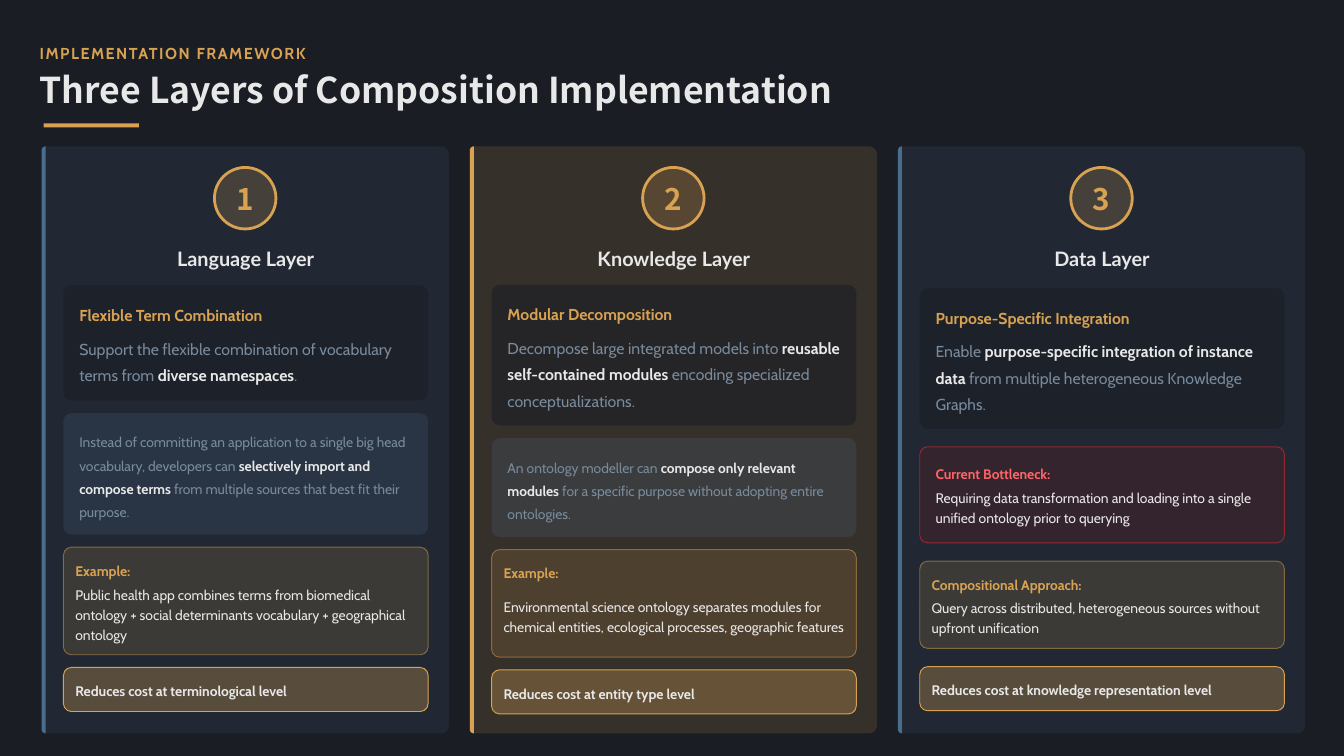
import math
from collections import namedtuple
from dataclasses import dataclass

from lxml import etree
from pptx import Presentation, util as u
from pptx.dml import color
from pptx.enum import shapes, text as t
from pptx.oxml import ns

Box = namedtuple("Box", "left top width height")
Panel = namedtuple("Panel", "style height heading body")
Layer = namedtuple("Layer", "name accent stack_top gap panels")


@dataclass(frozen=True)
class Theme:
    """Colours, fonts and type sizes of the deck."""
    night: str = "1A1D24"
    gold: str = "D8A252"
    steel: str = "4A6D8C"
    slate: str = "788A9C"
    light: str = "E8E8E8"
    wine: str = "82181A"
    red: str = "FB2C36"
    coral: str = "FF6467"
    body: str = "Cabin"
    label: str = "Lato"
    display: str = "Noto Sans CJK SC"
    title: float = 25.4
    number: float = 21.2
    name: float = 14.2
    large: float = 11.3
    small: float = 9.9


@dataclass(frozen=True)
class PanelStyle:
    """Look of one kind of panel; lengths in centimetres."""
    fill: str
    alpha: int
    line: str = None
    line_alpha: int = 50
    pad: float = 0.3
    head_height: float = 0.5
    head_gap: float = 0.1
    head_color: str = Theme.gold
    size: float = Theme.small
    color: str = Theme.light
    bold: bool = False
    spacing: float = 1.2


STYLES = {
    "claim": PanelStyle(Theme.night, 60, pad=0.4, head_height=0.6, head_gap=0.19,
                        size=Theme.large, color=Theme.slate, spacing=1.4),
    "detail": PanelStyle(Theme.steel, 20, pad=0.4, color=Theme.slate, spacing=1.4),
    "example": PanelStyle(Theme.gold, 15, Theme.gold),
    "bottleneck": PanelStyle(Theme.wine, 20, Theme.red, pad=0.4, head_color=Theme.coral),
    "verdict": PanelStyle(Theme.gold, 30, Theme.gold, line_alpha=100, bold=True),
}

LAYERS = [
    Layer("Language Layer", Theme.steel, 3.5, 0.32, [
        Panel("claim", 2.9, "Flexible Term Combination",
              "Support the flexible combination of vocabulary terms from **diverse namespaces**."),
        Panel("detail", 3.06, "",
              "Instead of committing an application to a single big head vocabulary, developers can "
              "**selectively import and compose terms** from multiple sources that best fit their purpose."),
        Panel("example", 2.71, "Example:",
              "Public health app combines terms from biomedical ontology + social determinants "
              "vocabulary + geographical ontology"),
        Panel("verdict", 1.11, "", "Reduces cost at terminological level"),
    ]),
    Layer("Knowledge Layer", Theme.gold, 3.49, 0.32, [
        Panel("claim", 3.54, "Modular Decomposition",
              "Decompose large integrated models into **reusable self-contained modules** "
              "encoding specialized conceptualizations."),
        Panel("detail", 2.49, "",
              "An ontology modeller can **compose only relevant modules** for a specific purpose "
              "without adopting entire ontologies."),
        Panel("example", 2.71, "Example:",
              "Environmental science ontology separates modules for chemical entities, "
              "ecological processes, geographic features"),
        Panel("verdict", 1.11, "", "Reduces cost at entity type level"),
    ]),
    Layer("Data Layer", Theme.steel, 3.57, 0.46, [
        Panel("claim", 3.54, "Purpose-Specific Integration",
              "Enable **purpose-specific integration of instance data** from multiple "
              "heterogeneous Knowledge Graphs."),
        Panel("bottleneck", 2.42, "Current Bottleneck:",
              "Requiring data transformation and loading into a single unified ontology prior to querying"),
        Panel("example", 2.2, "Compositional Approach:",
              "Query across distributed, heterogeneous sources without upfront unification"),
        Panel("verdict", 1.11, "", "Reduces cost at knowledge representation level"),
    ]),
]


def lengths(box):
    """Turn a box in centimetres into slide lengths."""
    return [u.Cm(value) for value in box]


def write(shape, text, size, tint, font=Theme.body, bold=False, spacing=1.2,
          align=t.PP_ALIGN.LEFT, tracking=0):
    """Put one formatted paragraph in a shape; ** marks emphasis."""
    frame = shape.text_frame
    frame.word_wrap = True
    frame.auto_size = t.MSO_AUTO_SIZE.NONE
    frame.vertical_anchor = t.MSO_ANCHOR.MIDDLE
    frame.margin_left = frame.margin_top = frame.margin_right = frame.margin_bottom = 0
    para = frame.paragraphs[0]
    para.alignment = align
    para.line_spacing = spacing
    for index, part in enumerate(text.split("**")):
        strong = index % 2 == 1
        span = para.add_run()
        span.text = part
        span.font.name = font
        span.font.size = u.Pt(size)
        span.font.bold = bold or strong
        span.font.color.rgb = color.RGBColor.from_string(Theme.light if strong else tint)
        if tracking:
            span.font._element.set("spc", str(tracking))


def add_text(page, box, text, **style):
    """Add a text box and write in it."""
    write(page.shapes.add_textbox(*lengths(box)), text, **style)


def paint(fill, tint, alpha=100):
    """Give a fill a solid colour with an opacity in percent."""
    fill.solid()
    fill.fore_color.rgb = color.RGBColor.from_string(tint)
    if alpha < 100:
        node = fill._xPr.find(ns.qn("a:solidFill"))[0]
        etree.SubElement(node, ns.qn("a:alpha")).set("val", str(alpha * 1000))


def dress(shape, tint, alpha=100, line=None, line_alpha=100, weight=0.67):
    """Set fill and outline and remove the shadow."""
    shape.shadow.inherit = False
    paint(shape.fill, tint, alpha)
    if line:
        paint(shape.line.fill, line, line_alpha)
        shape.line.width = u.Pt(weight)
    else:
        shape.line.fill.background()


def add_slab(page, box, left_radius, right_radius, tint, alpha=100):
    """Draw a block whose left and right corners have their own radii."""
    right, bottom = box.left + box.width, box.top + box.height
    corners = [(right - right_radius, bottom - right_radius, right_radius, 0),
               (box.left + left_radius, bottom - left_radius, left_radius, 90),
               (box.left + left_radius, box.top + left_radius, left_radius, 180),
               (right - right_radius, box.top + right_radius, right_radius, 270)]
    points = [(u.Cm(x + radius * math.cos(math.radians(start + step))),
               u.Cm(y + radius * math.sin(math.radians(start + step))))
              for x, y, radius, start in corners
              for step in (range(0, 91, 15) if radius else [0])]
    builder = page.shapes.build_freeform(*points[0])
    builder.add_line_segments(points[1:], close=True)
    dress(builder.convert_to_shape(), tint, alpha)


def add_header(page, box):
    """Place the kicker, the title and the accent rule."""
    add_text(page, Box(box.left, box.top, box.width, 0.61), "IMPLEMENTATION FRAMEWORK",
             size=Theme.large, tint=Theme.gold, bold=True, tracking=110)
    title = page.shapes.title
    title.left, title.top, title.width, title.height = lengths(
        Box(box.left, box.top + 0.81, box.width, 1))
    write(title, "Three Layers of Composition Implementation", size=Theme.title,
          tint=Theme.light, font=Theme.display, bold=True, spacing=0.9)
    rule = Box(box.left + 0.1, box.top + 2.11, 2.4, 0.1)
    dress(page.shapes.add_shape(shapes.MSO_SHAPE.RECTANGLE, *lengths(rule)), Theme.gold)


def add_panel(page, box, panel):
    """Draw one rounded panel with its heading and body."""
    style = STYLES[panel.style]
    shape = page.shapes.add_shape(shapes.MSO_SHAPE.ROUNDED_RECTANGLE, *lengths(box))
    shape.adjustments[0] = 0.2 / box.height
    dress(shape, style.fill, style.alpha, style.line, style.line_alpha)
    left, top = box.left + style.pad, box.top + style.pad
    width = box.width - style.pad - 0.15
    if panel.heading:
        add_text(page, Box(left, top, width, style.head_height), panel.heading,
                 size=style.size, tint=style.head_color, bold=True)
        top += style.head_height + style.head_gap
    add_text(page, Box(left, top, width, box.top + box.height - style.pad - top), panel.body,
             size=style.size, tint=style.color, bold=style.bold, spacing=style.spacing)


def add_layer(page, box, number, layer):
    """Draw one layer card with badge, name and stacked panels."""
    add_slab(page, box, 0.1, 0.2, layer.accent, 15)
    add_slab(page, box._replace(width=0.1), 0.1, 0, layer.accent)
    badge = Box(box.left + (box.width - 1.55) / 2, box.top + 0.53, 1.55, 1.55)
    circle = page.shapes.add_shape(shapes.MSO_SHAPE.OVAL, *lengths(badge))
    dress(circle, Theme.gold, 20, Theme.gold, weight=2)
    write(circle, str(number), size=Theme.number, tint=Theme.gold, font=Theme.display,
          bold=True, spacing=1.0, align=t.PP_ALIGN.CENTER)
    add_text(page, Box(box.left + 0.42, box.top + 2.41, box.width - 0.82, 0.69), layer.name,
             size=Theme.name, tint=Theme.light, font=Theme.label, bold=True,
             align=t.PP_ALIGN.CENTER)
    top = box.top + layer.stack_top
    for panel in layer.panels:
        add_panel(page, Box(box.left + 0.55, top, 9.19, panel.height), panel)
        top += panel.height + layer.gap


def main():
    """Build and save the deck."""
    deck = Presentation()
    deck.slide_width, deck.slide_height = u.Cm(33.87), u.Cm(19.05)
    page = deck.slides.add_slide(deck.slide_layouts[5])
    paint(page.background.fill, Theme.night)
    add_header(page, Box(1, 1, 32.2, 2.2))
    for index, layer in enumerate(LAYERS):
        add_layer(page, Box(1.05 + 10.79 * index, 3.69, 10.26, 14.79), index + 1, layer)
    deck.save("out.pptx")


if __name__ == "__main__":
    main()
